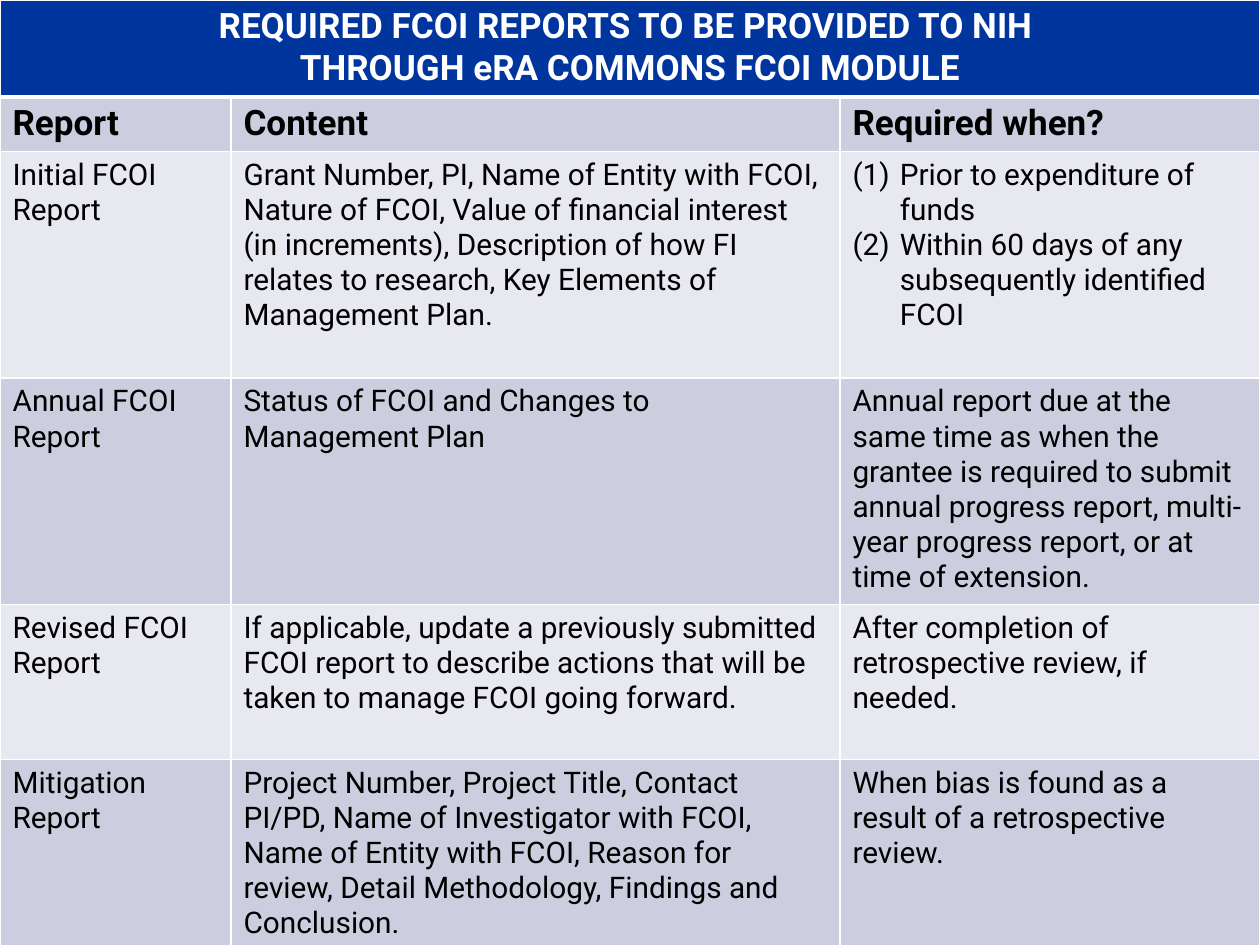
"""Build a one-slide table of the FCOI reports that must be provided."""
from lxml.etree import SubElement
from pptx import Presentation
from pptx.dml.color import RGBColor
from pptx.enum.text import PP_ALIGN as Align
from pptx.oxml.ns import qn
from pptx.util import Pt

COLORS = {
    "banner": "00359E",
    "dark_band": "CCCEDF",
    "light_band": "E7E8F0",
    "text": "000000",
    "white": "FFFFFF",
}
FONT = "Roboto"
COLUMN_WIDTHS = [132, 348, 240]
ROW_HEIGHTS = [55.5, 31, 129.5, 129.5, 88.5, 129]
BANNER = [
    "REQUIRED FCOI REPORTS TO BE PROVIDED TO NIH ",
    "THROUGH eRA COMMONS FCOI MODULE",
]
HEADINGS = ["Report", "Content", "Required when?"]
REPORTS = [
    [
        "Initial FCOI Report",
        "Grant Number, PI, Name of Entity with FCOI, Nature of FCOI, Value of "
        "financial interest (in increments), Description of how FI relates to "
        "research, Key Elements of Management Plan.",
        [
            "Prior to expenditure of funds",
            "Within 60 days of any subsequently identified FCOI",
        ],
    ],
    [
        "Annual FCOI Report",
        "Status of FCOI and Changes to Management Plan",
        "Annual report due at the same time as when the grantee is required to "
        "submit annual progress report, multi-year progress report, or at time "
        "of extension.",
    ],
    [
        "Revised FCOI Report",
        "If applicable, update a previously submitted FCOI report to describe "
        "actions that will be taken to manage FCOI going forward.",
        "After completion of retrospective review, if needed.",
    ],
    [
        "Mitigation Report",
        "Project Number, Project Title, Contact PI/PD, Name of Investigator with "
        "FCOI, Name of Entity with FCOI, Reason for review, Detail Methodology, "
        "Findings and Conclusion.",
        "When bias is found as a result of a retrospective review.",
    ],
]


def color(name):
    return RGBColor.from_string(COLORS[name])


def add_borders(cell, top=1, bottom=1):
    properties = cell._tc.get_or_add_tcPr()
    for side, width in (("L", 1), ("R", 1), ("T", top), ("B", bottom)):
        border = SubElement(properties, qn(f"a:ln{side}"), w=str(Pt(width)))
        paint = SubElement(border, qn("a:solidFill"))
        SubElement(paint, qn("a:srgbClr"), val=COLORS["white"])


def fill_cell(cell, band):
    cell.fill.solid()
    cell.fill.fore_color.rgb = color(band)


def write_cell(cell, lines, size, bold=False, ink="text", align=Align.LEFT):
    cell.text_frame.text = "\n".join(lines)
    for paragraph in cell.text_frame.paragraphs:
        paragraph.alignment = align
        for run in paragraph.runs:
            run.font.name = FONT
            run.font.size = Pt(size)
            run.font.bold = bold
            run.font.color.rgb = color(ink)


def number_lines(cell, indent=27):
    for paragraph in cell.text_frame.paragraphs:
        properties = paragraph._p.get_or_add_pPr()
        properties.set("marL", str(Pt(indent)))
        properties.set("indent", str(Pt(-indent)))
        SubElement(properties, qn("a:buAutoNum"), type="arabicParenBoth")


def add_report_table(slide):
    table = slide.shapes.add_table(
        len(ROW_HEIGHTS), len(COLUMN_WIDTHS), Pt(0), Pt(0),
        Pt(sum(COLUMN_WIDTHS)), Pt(sum(ROW_HEIGHTS)),
    ).table
    table.first_row = table.horz_banding = False
    for column, width in zip(table.columns, COLUMN_WIDTHS):
        column.width = Pt(width)
    for number, (row, height) in enumerate(zip(table.rows, ROW_HEIGHTS)):
        row.height = Pt(height)
        band = "dark_band" if number % 2 else "light_band"
        for cell in row.cells:
            add_borders(cell, top=3 if number == 1 else 1,
                        bottom=3 if number == 0 else 1)
            fill_cell(cell, band if number else "banner")
    return table


def write_banner(table):
    banner = table.cell(0, 0)
    banner.merge(table.cell(0, len(COLUMN_WIDTHS) - 1))
    write_cell(banner, BANNER, 20, bold=True, ink="white", align=Align.CENTER)


def write_headings(table):
    for column, heading in enumerate(HEADINGS):
        write_cell(table.cell(1, column), [heading], 20, bold=True)


def write_reports(table):
    for row, report in enumerate(REPORTS, start=2):
        for column, entry in enumerate(report):
            cell = table.cell(row, column)
            if isinstance(entry, list):
                write_cell(cell, entry, 17)
                number_lines(cell)
            else:
                write_cell(cell, [entry], 17)


def main():
    deck = Presentation()
    deck.slide_width, deck.slide_height = Pt(720), Pt(540)
    slide = deck.slides.add_slide(deck.slide_layouts[6])
    table = add_report_table(slide)
    write_banner(table)
    write_headings(table)
    write_reports(table)
    deck.save("out.pptx")


if __name__ == "__main__":
    main()
